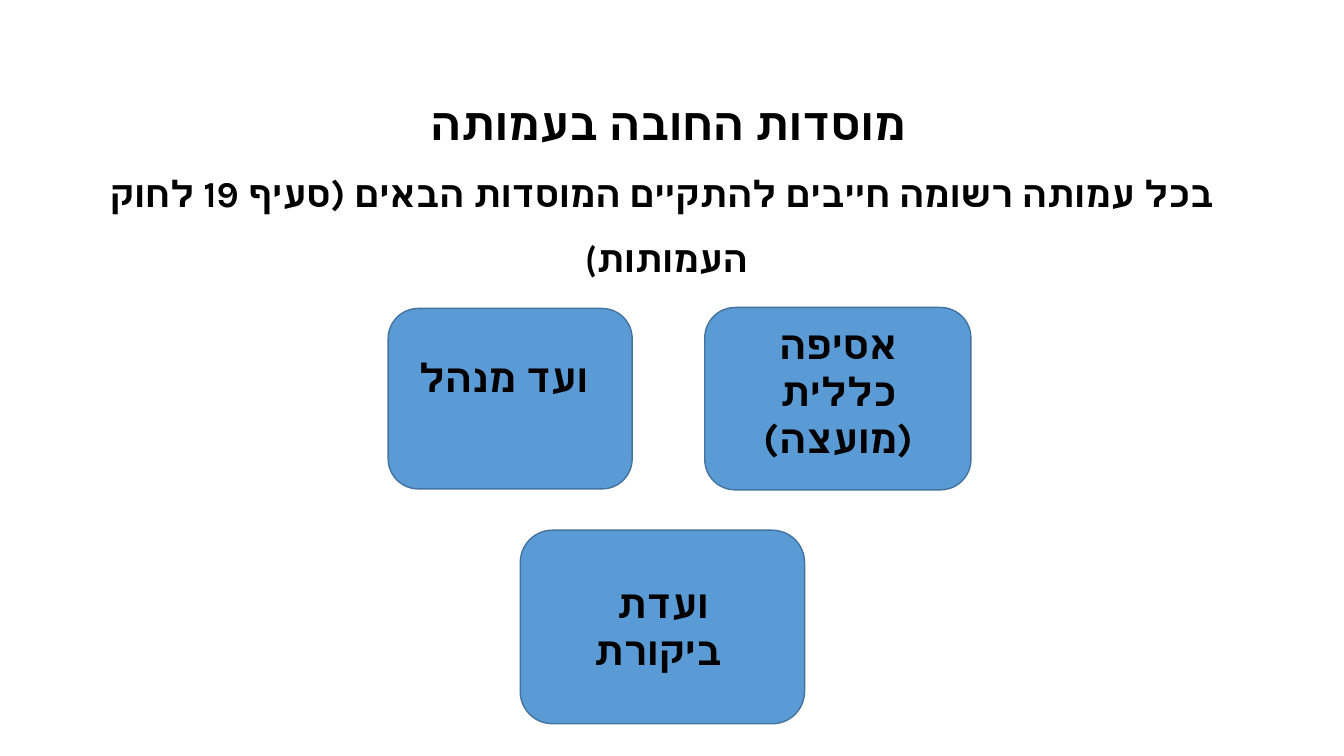
"""Builds a slide on the mandatory institutions of an association."""
from lxml import etree
from pptx import Presentation
from pptx.dml.color import RGBColor
from pptx.enum.shapes import MSO_SHAPE
from pptx.enum.text import MSO_AUTO_SIZE, PP_ALIGN
from pptx.oxml import parse_xml
from pptx.oxml.ns import qn
from pptx.util import Inches, Pt

ROUNDED = MSO_SHAPE.ROUNDED_RECTANGLE
GROW = MSO_AUTO_SIZE.SHAPE_TO_FIT_TEXT
CENTER = PP_ALIGN.CENTER
TEXT_SHADOW = (
    '<a:effectLst xmlns:a="http://schemas.openxmlformats.org/drawingml/2006/main">'
    '<a:outerShdw blurRad="38100" dist="38100" dir="2700000" algn="tl">'
    '<a:srgbClr val="000000"><a:alpha val="43000"/></a:srgbClr>'
    '</a:outerShdw></a:effectLst>'
)


def color(value):
    return RGBColor.from_string(value)


def style_run(r, size, name="Karla"):
    r.font.size = Pt(size)
    r.font.bold = True
    r.font.color.rgb = color("000000")
    r.font.name = name
    etree.SubElement(r.font._element, qn("a:cs"), typeface=name)


prs = Presentation()
prs.slide_width = Inches(13.33)
prs.slide_height = Inches(7.5)
s = prs.slides.add_slide(prs.slide_layouts[6])

title = s.shapes.add_textbox(Inches(0.3), Inches(0.63), Inches(12.54), Inches(2.74))
tf = title.text_frame
tf.word_wrap = True
tf.auto_size = GROW
p = tf.paragraphs[0]
p.alignment = CENTER
p.line_spacing = 1.5
p.space_after = Pt(8)
p._p.get_or_add_pPr().set("rtl", "1")
p.text = "מוסדות החובה בעמותה \v"
style_run(p.runs[0], 32)
for text, name in [
    ("בכל עמותה רשומה חייבים להתקיים המוסדות הבאים (סעיף 19 לחוק העמותות", "Karla"),
    (") ", "Calibri"),
]:
    r = p.add_run()
    r.text = text
    style_run(r, 26, name)

institutions = [
    ("אסיפה כללית (מועצה)", (6.99, 3.05, 2.64, 1.81), (7.26, 3.13, 2.11, 1.51)),
    ("ועדת ביקורת ", (5.16, 5.26, 2.82, 1.92), (5.47, 5.7, 2.21, 1.04)),
    ("ועד מנהל", (3.85, 3.06, 2.42, 1.79), (3.85, 3.46, 2.29, 0.57)),
]
for text, box_area, label_area in institutions:
    box = s.shapes.add_shape(ROUNDED, *map(Inches, box_area))
    box.shadow.inherit = False
    box.fill.solid()
    box.fill.fore_color.rgb = color("5B9BD5")
    box.line.color.rgb = color("43739E")
    box.line.width = Pt(1)

    label = s.shapes.add_textbox(*map(Inches, label_area))
    tf = label.text_frame
    tf.word_wrap = True
    tf.auto_size = GROW
    tf.text = text
    p = tf.paragraphs[0]
    p.alignment = CENTER
    r = p.runs[0]
    style_run(r, 28)
    r.font._element.find(qn("a:solidFill")).addnext(parse_xml(TEXT_SHADOW))

prs.save("out.pptx")
